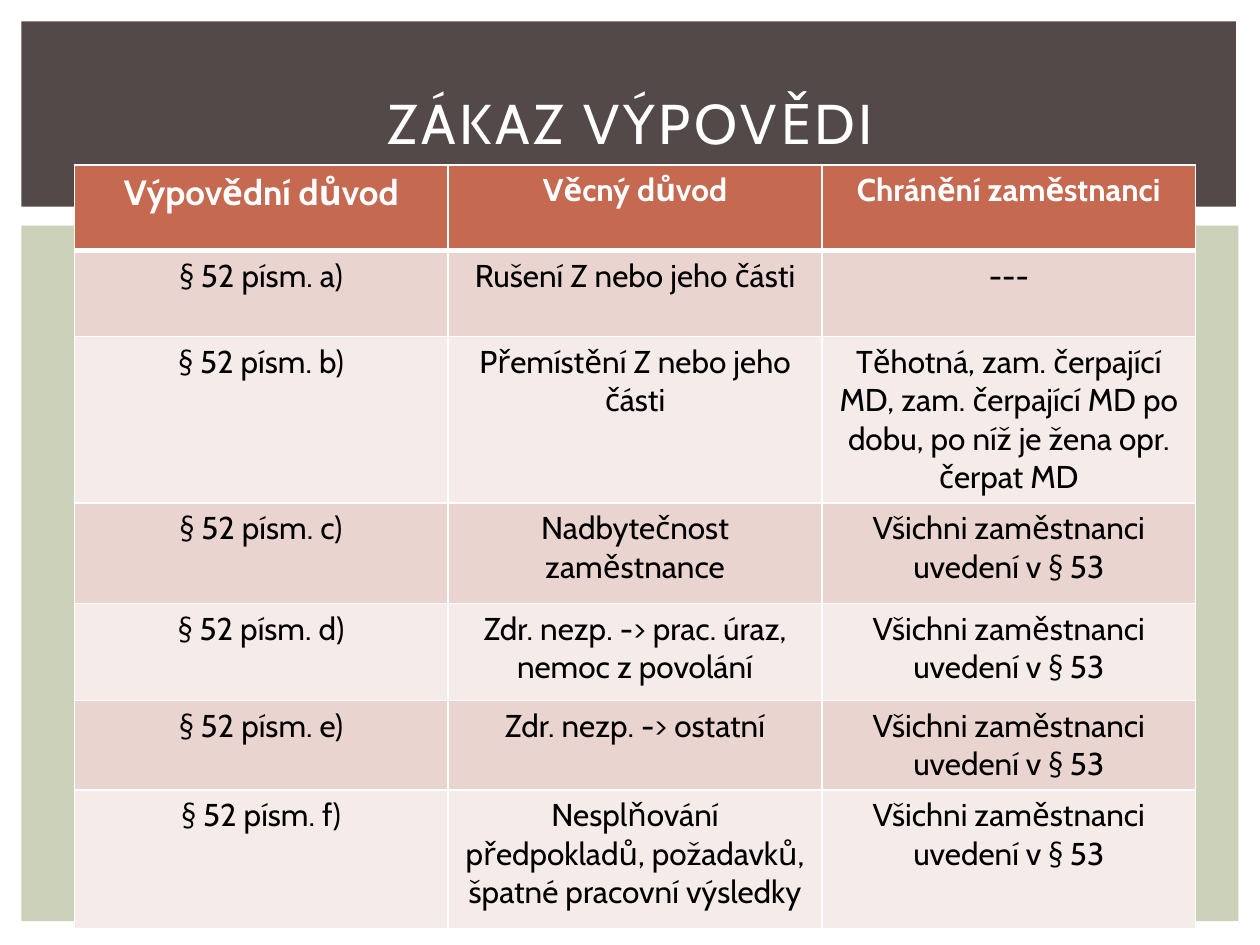
from lxml import etree
from pptx import Presentation
from pptx.dml.color import RGBColor
from pptx.enum import shapes, text
from pptx.oxml.ns import qn
from pptx.util import Inches, Pt

COLORS = {
    "white": "FFFFFF",
    "black": "000000",
    "band": "534949",
    "panel": "CCD1B9",
    "header": "C66951",
    "odd": "EAD4D0",
    "even": "F5EBE9",
}
PROTECTED = "Všichni zaměstnanci uvedení v § 53"
HEADERS = ["Výpovědní důvod", "Věcný důvod", "Chránění zaměstnanci"]
REASONS = [
    ("a", "Rušení Z nebo jeho části", "---"),
    ("b", "Přemístění Z nebo jeho části",
     "Těhotná, zam. čerpající MD, zam. čerpající MD po dobu, po níž je žena opr. čerpat MD"),
    ("c", "Nadbytečnost zaměstnance", PROTECTED),
    ("d", "Zdr. nezp. -> prac. úraz, nemoc z povolání", PROTECTED),
    ("e", "Zdr. nezp. -> ostatní", PROTECTED),
    ("f", "Nesplňování předpokladů, požadavků, špatné pracovní výsledky", PROTECTED),
]
ROW_HEIGHTS = [0.68, 0.68, 0.8, 0.8, 0.77, 0.68, 1.1]


def color(name):
    return RGBColor.from_string(COLORS[name])


class SlideBuilder:
    font = "Cabin"

    def __init__(self, page):
        self.page = page

    def panel(self, left, top, width, height, fill):
        shape = self.page.shapes.add_shape(
            shapes.MSO_SHAPE.RECTANGLE,
            Inches(left), Inches(top), Inches(width), Inches(height))
        shape.shadow.inherit = False
        shape.fill.solid()
        shape.fill.fore_color.rgb = color(fill)
        shape.line.fill.background()

    def add_words(self, frame, words, size, ink, bold=False):
        para = frame.paragraphs[0]
        para.alignment = text.PP_ALIGN.CENTER
        span = para.add_run()
        span.text = words
        span.font.name = self.font
        span.font.size = Pt(size)
        span.font.bold = bold
        span.font.color.rgb = color(ink)
        return span

    def title(self, words, left, top, width, height):
        box = self.page.shapes.title
        box.left, box.top = Inches(left), Inches(top)
        box.width, box.height = Inches(width), Inches(height)
        box.text_frame.vertical_anchor = text.MSO_ANCHOR.MIDDLE
        span = self.add_words(box.text_frame, words, 32, "white")
        span.font._element.set("spc", "200")
        # Bring the title in front of the panels
        box.element.getparent().append(box.element)

    def borders(self, cell, top, bottom):
        """Draw white cell edges; top and bottom are widths in points."""
        properties = cell._tc.get_or_add_tcPr()
        for side, width in (("L", 1), ("R", 1), ("T", top), ("B", bottom)):
            line = etree.SubElement(properties, qn(f"a:ln{side}"), w=str(Pt(width)))
            fill = etree.SubElement(line, qn("a:solidFill"))
            etree.SubElement(fill, qn("a:srgbClr"), val=COLORS["white"])

    def table(self, rows, left, top, width, heights):
        frame = self.page.shapes.add_table(
            len(rows), len(rows[0]),
            Inches(left), Inches(top), Inches(width), Inches(sum(heights)))
        table = frame.table
        for index, (words, height) in enumerate(zip(rows, heights)):
            table.rows[index].height = Inches(height)
            header = index == 0
            fill = "header" if header else "odd" if index % 2 else "even"
            for column, entry in enumerate(words):
                cell = table.cell(index, column)
                self.borders(cell, 3 if index == 1 else 1, 3 if header else 1)
                cell.fill.solid()
                cell.fill.fore_color.rgb = color(fill)
                size = 20 if header and column == 0 else 18
                self.add_words(cell.text_frame, entry, size,
                               "white" if header else "black", header)


def main():
    deck = Presentation()
    deck.slide_width, deck.slide_height = Inches(10), Inches(7.5)
    builder = SlideBuilder(deck.slides.add_slide(deck.slide_layouts[5]))
    builder.panel(0.17, 1.79, 9.66, 5.52, "panel")
    builder.panel(0.17, 0.17, 9.64, 1.47, "band")
    builder.title("ZÁKAZ VÝPOVĚDI", 0.42, 0.39, 9.17, 1.15)
    rows = [HEADERS] + [
        [f"§ 52 písm. {letter})", reason, protected]
        for letter, reason, protected in REASONS]
    builder.table(rows, 0.59, 1.31, 8.9, ROW_HEIGHTS)
    deck.save("out.pptx")


if __name__ == "__main__":
    main()
